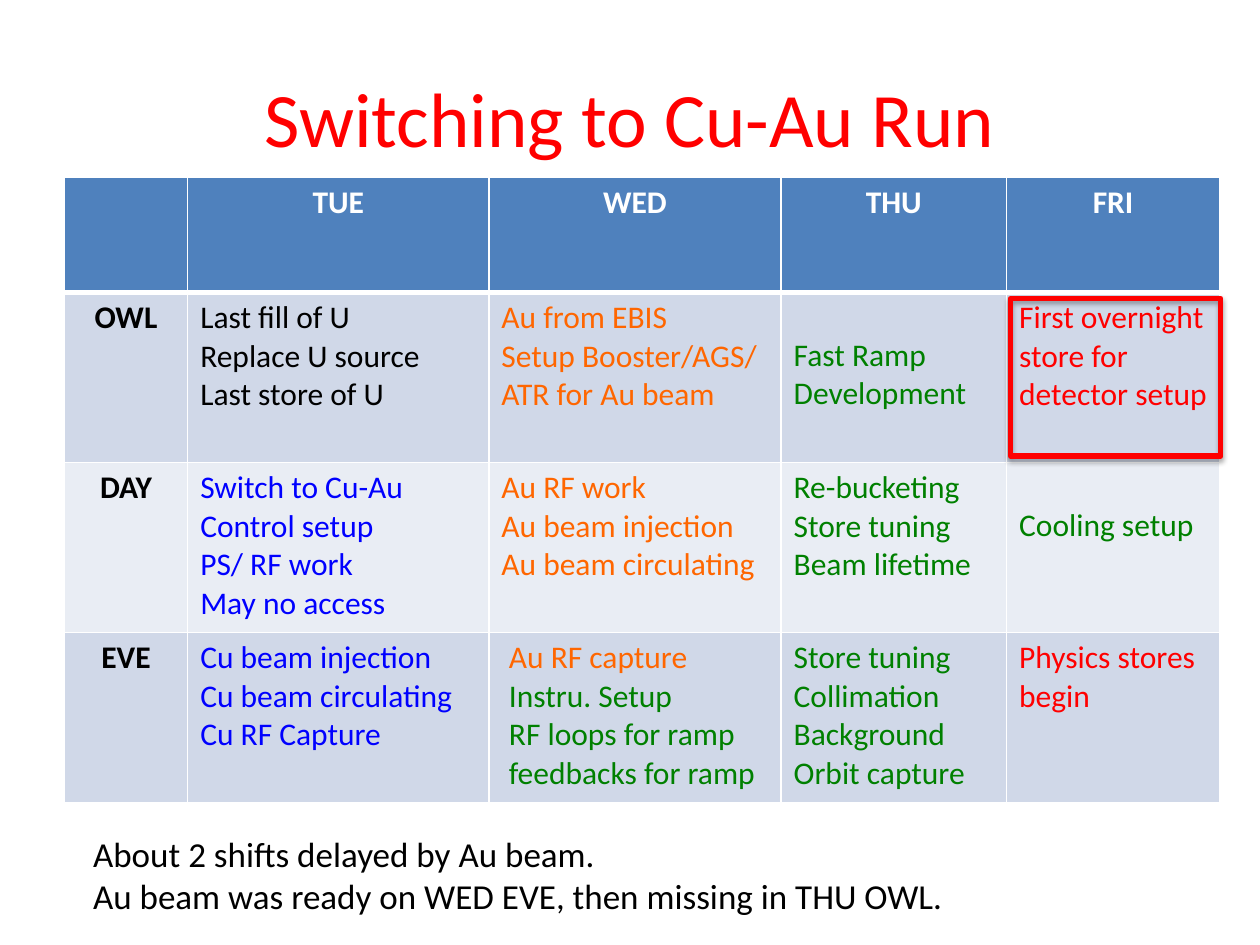
"""Build the weekly shift plan slide for switching to the Cu-Au run."""
from lxml.etree import SubElement
from pptx import Presentation
from pptx.dml.color import RGBColor
from pptx.enum.shapes import MSO_SHAPE
from pptx.enum.text import MSO_ANCHOR, PP_ALIGN
from pptx.oxml.ns import qn
from pptx.util import Inches, Pt

FONT = "Calibri"
WHITE = RGBColor(0xFF, 0xFF, 0xFF)
BLACK = RGBColor(0x00, 0x00, 0x00)
RED = RGBColor(0xFF, 0x00, 0x00)
ORANGE = RGBColor(0xFF, 0x66, 0x00)
GREEN = RGBColor(0x00, 0x80, 0x00)
BLUE = RGBColor(0x00, 0x00, 0xFF)
HEADER_FILL = RGBColor(0x4F, 0x81, 0xBD)
BAND_FILLS = (RGBColor(0xD0, 0xD8, 0xE8), RGBColor(0xE9, 0xED, 0xF4))

TITLE = "Switching to Cu-Au Run"
NOTES = [
    "About 2 shifts delayed by Au beam.",
    "Au beam was ready on WED EVE, then missing in THU OWL.",
]
DAYS = ["", "TUE", "WED", "THU", "FRI"]
SHIFTS = [
    ("OWL", [
        [("Last fill of U", BLACK), ("Replace U source", BLACK), ("Last store of U", BLACK)],
        [("Au from EBIS", ORANGE), ("Setup Booster/AGS/ ATR for Au beam", ORANGE)],
        [("Fast Ramp Development", GREEN)],
        [("First overnight store for detector setup", RED)],
    ]),
    ("DAY", [
        [("Switch to Cu-Au", BLUE), ("Control setup", BLUE),
         ("PS/ RF work", BLUE), ("May no access", BLUE)],
        [("Au RF work", ORANGE), ("Au beam injection", ORANGE), ("Au beam circulating", ORANGE)],
        [("Re-bucketing", GREEN), ("Store tuning", GREEN), ("Beam lifetime", GREEN)],
        [("Cooling setup", GREEN)],
    ]),
    ("EVE", [
        [("Cu beam injection", BLUE), ("Cu beam circulating Cu RF Capture", BLUE)],
        [("Au RF capture", ORANGE), ("Instru. Setup", GREEN),
         ("RF loops for ramp", GREEN), ("feedbacks for ramp", GREEN)],
        [("Store tuning", GREEN), ("Collimation", GREEN),
         ("Background", GREEN), ("Orbit capture", GREEN)],
        [("Physics stores begin", RED)],
    ]),
]
COLUMN_WIDTHS = [0.98, 2.39, 2.32, 1.79, 1.69]
ROW_HEIGHTS = [0.91, 1.35, 1.35, 1.35]
LOWERED_CELLS = [(1, 3), (2, 4)]
INDENTED_CELL = (3, 2)


def write_lines(text_frame, lines, size, bold=False, alignment=PP_ALIGN.LEFT):
    """Write one paragraph for each (text, color) pair."""
    for index, (text, color) in enumerate(lines):
        paragraph = text_frame.add_paragraph() if index else text_frame.paragraphs[0]
        paragraph.alignment = alignment
        run = paragraph.add_run()
        run.text = text
        run.font.name = FONT
        run.font.size = Pt(size)
        run.font.bold = bold
        run.font.color.rgb = color


def add_text(slide, box, lines, size, **options):
    """Add a wrapping text box and return its text frame."""
    text_frame = slide.shapes.add_textbox(*map(Inches, box)).text_frame
    text_frame.word_wrap = True
    write_lines(text_frame, lines, size, **options)
    return text_frame


def style_cell(cell, fill, bottom_width):
    """Give a cell white borders and a solid fill."""
    properties = cell._tc.get_or_add_tcPr()
    for side, width in (("L", 1), ("R", 1), ("T", 1), ("B", bottom_width)):
        line = SubElement(properties, qn(f"a:ln{side}"), w=str(Pt(width)))
        SubElement(SubElement(line, qn("a:solidFill")), qn("a:srgbClr"), val=str(WHITE))
    cell.fill.solid()
    cell.fill.fore_color.rgb = fill


def add_schedule(slide):
    """Add the table of shifts by day."""
    table = slide.shapes.add_table(
        len(ROW_HEIGHTS), len(COLUMN_WIDTHS), Inches(0.51), Inches(1.41),
        Inches(sum(COLUMN_WIDTHS)), Inches(sum(ROW_HEIGHTS))).table
    for column, width in zip(table.columns, COLUMN_WIDTHS):
        column.width = Inches(width)
    for row, height in zip(table.rows, ROW_HEIGHTS):
        row.height = Inches(height)

    rows = [[[(day, WHITE)] if day else [] for day in DAYS]]
    rows += [[[(shift, BLACK)]] + tasks for shift, tasks in SHIFTS]
    for row_index, row in enumerate(rows):
        is_header = row_index == 0
        fill = HEADER_FILL if is_header else BAND_FILLS[(row_index - 1) % 2]
        for column_index, lines in enumerate(row):
            cell = table.cell(row_index, column_index)
            is_label = is_header or column_index == 0
            style_cell(cell, fill, 3 if is_header else 1)
            write_lines(cell.text_frame, lines, 18, bold=is_label,
                        alignment=PP_ALIGN.CENTER if is_label else PP_ALIGN.LEFT)
    for position in LOWERED_CELLS:
        table.cell(*position).margin_top = Inches(0.35)
    table.cell(*INDENTED_CELL).margin_left = Inches(0.16)


def add_highlight(slide):
    """Frame the first overnight store in red."""
    frame = slide.shapes.add_shape(
        MSO_SHAPE.RECTANGLE, Inches(8.02), Inches(2.37), Inches(1.67), Inches(1.25))
    frame.fill.background()
    frame.line.color.rgb = RED
    frame.line.width = Pt(3)
    frame.shadow.inherit = False
    effects = frame._element.spPr.find(qn("a:effectLst"))
    shadow = SubElement(effects, qn("a:outerShdw"), blurRad=str(Pt(3.1)),
                        dist=str(Pt(1.8)), dir="5400000", rotWithShape="0")
    color = SubElement(shadow, qn("a:srgbClr"), val=str(BLACK))
    SubElement(color, qn("a:alpha"), val="35000")


def main():
    """Assemble and save the slide."""
    presentation = Presentation()
    presentation.slide_width = Inches(10)
    presentation.slide_height = Inches(7.5)
    slide = presentation.slides.add_slide(presentation.slide_layouts[6])
    title = add_text(slide, (0.5, 0.3, 9, 1.25), [(TITLE, RED)], 44,
                     alignment=PP_ALIGN.CENTER)
    title.vertical_anchor = MSO_ANCHOR.MIDDLE
    add_schedule(slide)
    add_highlight(slide)
    add_text(slide, (0.64, 6.56, 9.18, 0.77), [(note, BLACK) for note in NOTES], 20)
    presentation.save("out.pptx")


if __name__ == "__main__":
    main()
